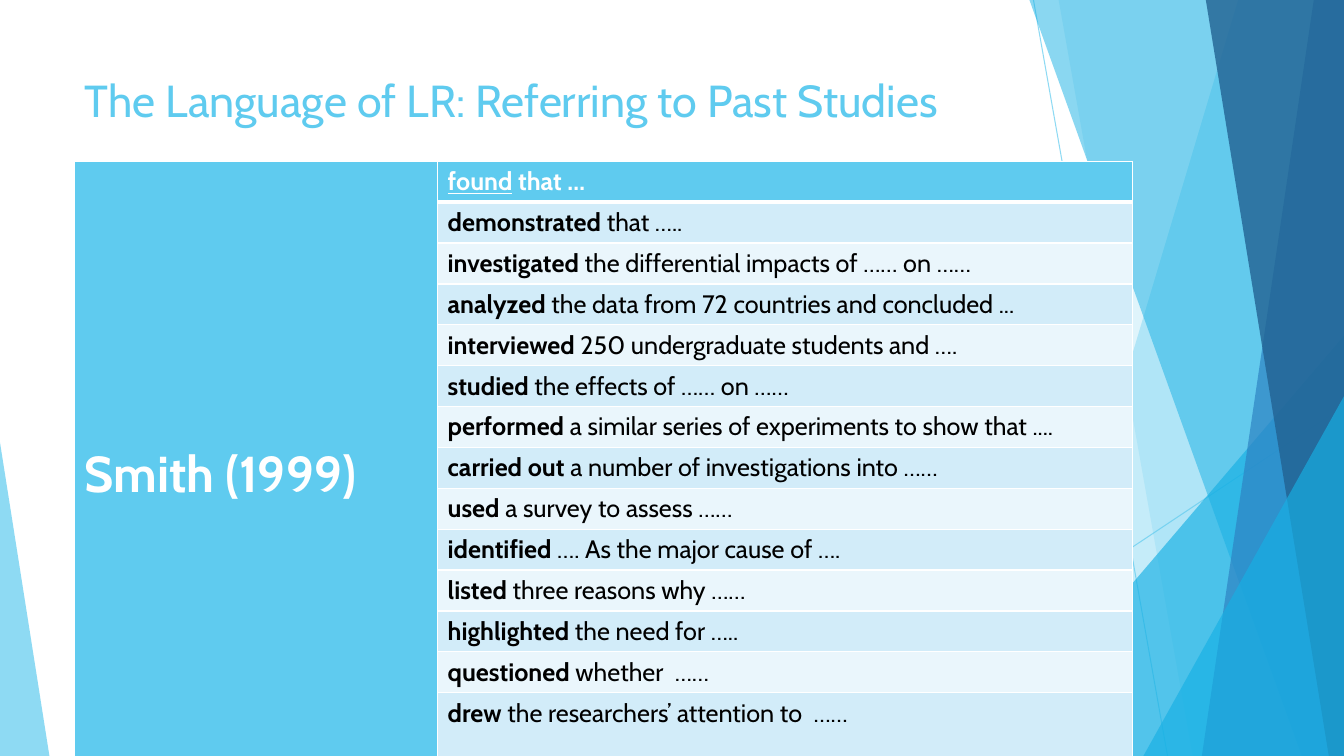
from lxml.etree import SubElement
from pptx import Presentation
from pptx.dml.color import RGBColor
from pptx.enum.shapes import MSO_CONNECTOR, MSO_SHAPE
from pptx.enum.text import MSO_ANCHOR, PP_ALIGN
from pptx.oxml.ns import qn
from pptx.util import Inches, Pt

FONT = "Cabin"
SKY, AQUA, BLUE, NAVY = "5FCBEF", "17B0E4", "2E83C3", "226292"
WHITE, BLACK = "FFFFFF", "000000"
BANDS = ["EAF6FC", "D2ECF9"]
WIDTH, HEIGHT = 13.33, 7.5

TITLE = "The Language of LR: Referring to Past Studies"
AUTHOR = "Smith (1999)"
PHRASES = [
    ("found", " that …"),
    ("demonstrated", " that ….."),
    ("investigated", " the differential impacts of …… on ……"),
    ("analyzed", " the data from 72 countries and concluded ..."),
    ("interviewed", " 250 undergraduate students and …."),
    ("studied", " the effects of …… on ……"),
    ("performed", " a similar series of experiments to show that ...."),
    ("carried out", " a number of investigations into ……"),
    ("used", " a survey to assess ……"),
    ("identified", " …. As the major cause of …."),
    ("listed", " three reasons why ……"),
    ("highlighted", " the need for ….."),
    ("questioned", " whether  ……"),
    ("drew", " the researchers’ attention to  ……"),
]

# Lines: start x, y, end x, y
RAYS = [(10.25, 0, 11.58, HEIGHT), (WIDTH, 4.03, 8.12, HEIGHT)]
# Facets, back to front. Panel: top x, bottom x. Triangle: left, top, width, apex
FACETS = [
    ("panel", (12.28, 10.04), SKY, 36),
    ("panel", (10.5, 11.83), SKY, 20),
    ("triangle", (9.77, 3.33, 3.56, 1), AQUA, 66),
    ("panel", (10.21, 12.91), AQUA, 50),
    ("panel", (13.03, 11.92), BLUE, 70),
    ("panel", (11.96, 13.18), NAVY, 80),
    ("triangle", (11.34, 3.93, 1.99, 1), AQUA, 66),
    ("triangle", (0, 4.39, 0.49, 0), SKY, 70),
]

TABLE_LEFT, TABLE_TOP = 0.74, 1.6
COLUMNS = [3.6, 6.89]
ROW_HEIGHT = 5.68 / len(PHRASES)
AUTHOR_OFFSET = 2.8


def rgb(hex_color):
    return RGBColor.from_string(hex_color)


def paint(fill, color, opacity=100):
    fill.solid()
    fill.fore_color.rgb = rgb(color)
    if opacity < 100:
        choice = fill._xPr.find(qn("a:solidFill"))[0]
        SubElement(choice, qn("a:alpha"), val=str(opacity * 1000))


def add_ray(slide, x1, y1, x2, y2):
    ray = slide.shapes.add_connector(
        MSO_CONNECTOR.STRAIGHT, Inches(x1), Inches(y1), Inches(x2), Inches(y2))
    ray.line.width = Pt(0.75)
    paint(ray.line.fill, SKY, 70)
    SubElement(ray._element.spPr, qn("a:effectLst"))


def add_facet(slide, kind, place, color, opacity):
    if kind == "panel":
        top_x, bottom_x = place
        builder = slide.shapes.build_freeform(
            Inches(top_x), 0, scale=1.0)
        corners = [(WIDTH, 0), (WIDTH, HEIGHT), (bottom_x, HEIGHT)]
        builder.add_line_segments([(Inches(x), Inches(y)) for x, y in corners])
        facet = builder.convert_to_shape()
    else:
        left, top, width, apex = place
        facet = slide.shapes.add_shape(
            MSO_SHAPE.ISOSCELES_TRIANGLE, Inches(left), Inches(top),
            Inches(width), Inches(HEIGHT - top))
        facet.adjustments[0] = apex
    facet.shadow.inherit = False
    facet.line.fill.background()
    paint(facet.fill, color, opacity)


def add_run(paragraph, text, color, **styles):
    run = paragraph.add_run()
    run.text = text
    run.font.color.rgb = rgb(color)
    for name, value in {"name": FONT, **styles}.items():
        setattr(run.font, name, value)


def format_cell(cell, color, bottom_width):
    widths = {"lnL": 1, "lnR": 1, "lnT": 1, "lnB": bottom_width}
    properties = cell._tc.get_or_add_tcPr()
    for side, width in widths.items():
        edge = SubElement(properties, qn("a:" + side), w=str(Pt(width)))
        SubElement(SubElement(edge, qn("a:solidFill")), qn("a:srgbClr"), val=WHITE)
    paint(cell.fill, color)


def add_phrase_table(slide):
    table = slide.shapes.add_table(
        len(PHRASES), len(COLUMNS), Inches(TABLE_LEFT), Inches(TABLE_TOP),
        Inches(sum(COLUMNS)), Inches(ROW_HEIGHT * len(PHRASES))).table
    for column, width in zip(table.columns, COLUMNS):
        column.width = Inches(width)
    for i, (verb, rest) in enumerate(PHRASES):
        is_header = i == 0
        author_cell, phrase_cell = table.cell(i, 0), table.cell(i, 1)
        bottom_width = 3 if is_header else 1
        format_cell(author_cell, SKY, bottom_width)
        format_cell(phrase_cell, SKY if is_header else BANDS[i % 2], bottom_width)
        paragraph = phrase_cell.text_frame.paragraphs[0]
        color = WHITE if is_header else BLACK
        add_run(paragraph, verb, color, size=Pt(18), bold=True, underline=is_header)
        add_run(paragraph, rest, color, size=Pt(18), bold=is_header)
    # The last row runs to the foot of the slide
    last = len(PHRASES) - 1
    for i, row in enumerate(table.rows):
        row.height = Inches(ROW_HEIGHT if i < last
                            else HEIGHT - TABLE_TOP - ROW_HEIGHT * last)
    author = table.cell(0, 0)
    author.merge(table.cell(last, 0))
    author.margin_top = Inches(AUTHOR_OFFSET)
    add_run(author.text_frame.paragraphs[0], AUTHOR, WHITE, size=Pt(36), bold=True)


def main():
    deck = Presentation()
    deck.slide_width, deck.slide_height = Inches(WIDTH), Inches(HEIGHT)
    slide = deck.slides.add_slide(deck.slide_layouts[5])
    for ray in RAYS:
        add_ray(slide, *ray)
    for facet in FACETS:
        add_facet(slide, *facet)
    title = slide.shapes.title
    title.left, title.top = Inches(TABLE_LEFT), Inches(0.67)
    title.width, title.height = Inches(9.4), Inches(1.44)
    title.text_frame.vertical_anchor = MSO_ANCHOR.TOP
    heading = title.text_frame.paragraphs[0]
    heading.alignment = PP_ALIGN.LEFT
    add_run(heading, TITLE, SKY, size=Pt(32))
    add_phrase_table(slide)
    deck.save("out.pptx")


if __name__ == "__main__":
    main()
